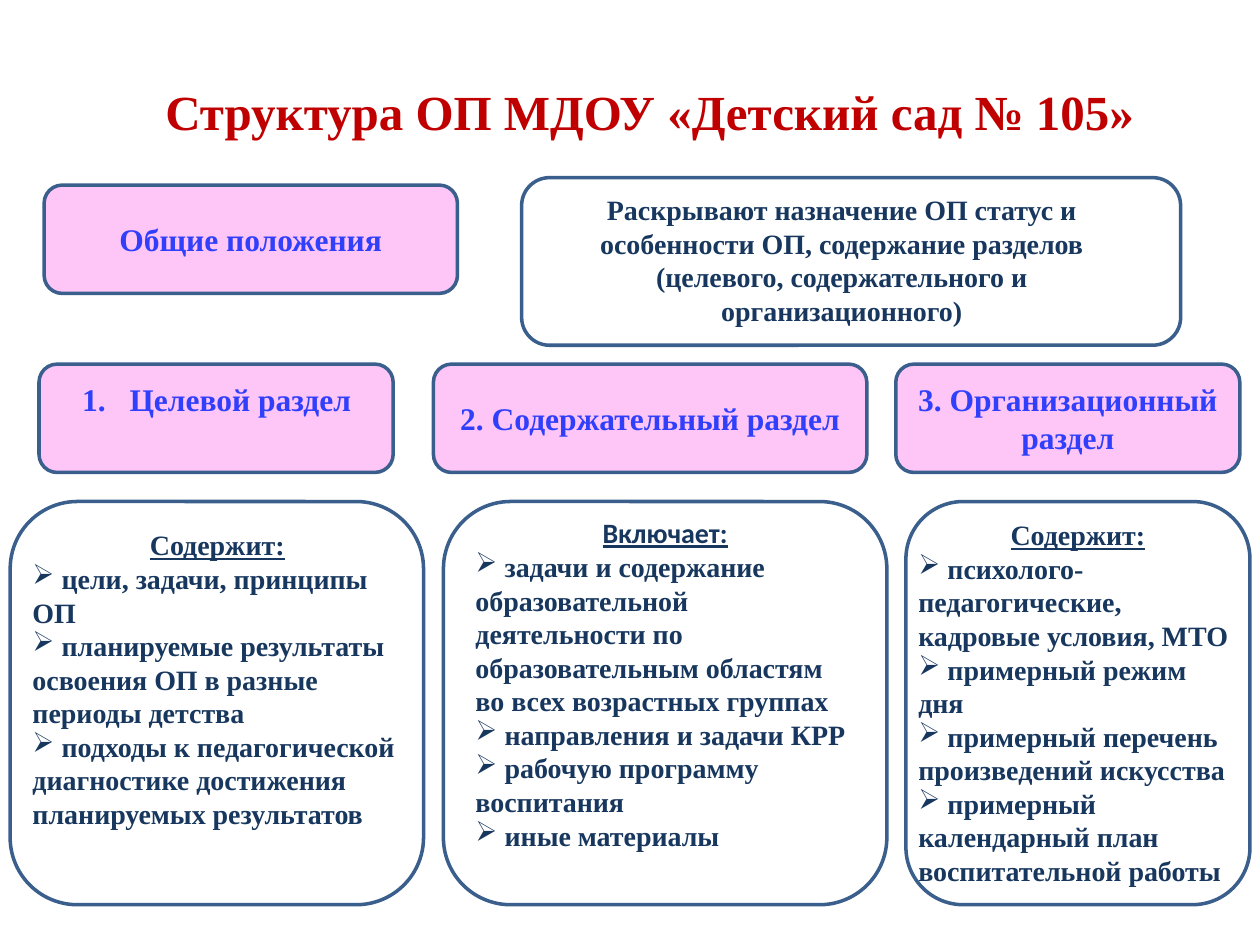
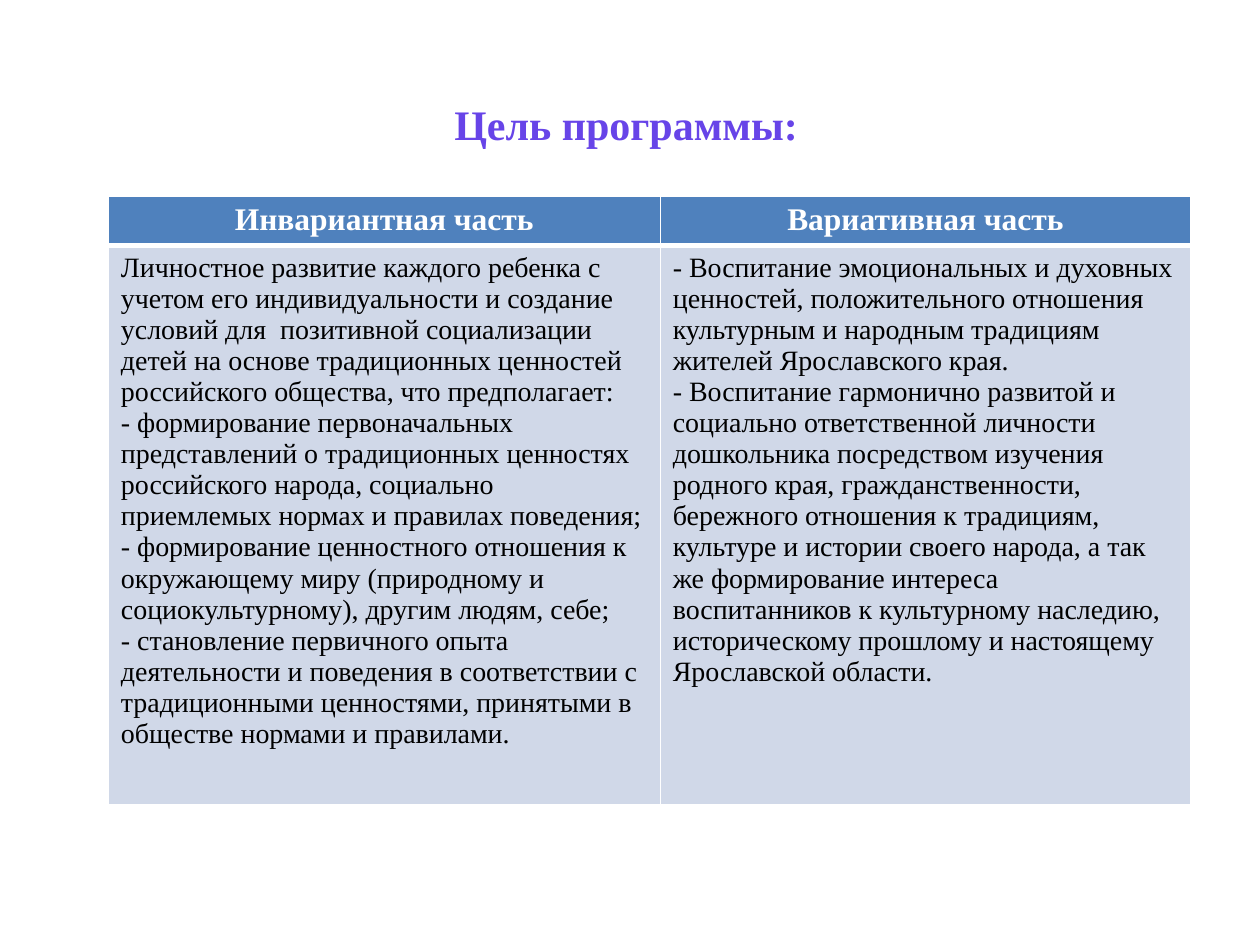
from lxml import etree
from pptx import Presentation
from pptx.dml.color import RGBColor
from pptx.enum.shapes import MSO_SHAPE
from pptx.enum.text import MSO_ANCHOR, MSO_AUTO_SIZE, PP_ALIGN
from pptx.oxml.ns import qn
from pptx.util import Pt

# Enum members
ROUNDED = MSO_SHAPE.ROUNDED_RECTANGLE
CENTER, LEFT = PP_ALIGN.CENTER, PP_ALIGN.LEFT
TOP, MIDDLE = MSO_ANCHOR.TOP, MSO_ANCHOR.MIDDLE
FIXED, GROW = MSO_AUTO_SIZE.NONE, MSO_AUTO_SIZE.SHAPE_TO_FIT_TEXT

# Colours
RED = RGBColor(0xC0, 0x00, 0x00)
VIOLET = RGBColor(0x67, 0x44, 0xE8)
BLUE = RGBColor(0x30, 0x3F, 0xFC)
NAVY = RGBColor(0x17, 0x37, 0x5E)
OUTLINE = RGBColor(0x3A, 0x5F, 0x8C)
PINK = RGBColor(0xFE, 0xC6, 0xF7)
HEADER_FILL = RGBColor(0x4F, 0x81, 0xBD)
BODY_FILL = RGBColor(0xD0, 0xD8, 0xE8)
WHITE = RGBColor(0xFF, 0xFF, 0xFF)
BLACK = RGBColor(0x00, 0x00, 0x00)

# Text formats
BASE = {"name": "Times New Roman", "bold": True}
SECTION = {**BASE, "size": Pt(18), "color": BLUE}
DETAIL = {**BASE, "size": Pt(16), "color": NAVY}
HEADER = {**BASE, "size": Pt(18), "color": WHITE}
CELL = {**BASE, "size": Pt(16), "color": BLACK, "bold": False}

# Structure slide: rows of section bands and of cards
BAND_TOP, BAND_HEIGHT = 208.1, 61.9
CARD_TOP, CARD_HEIGHT = 286.6, 230.4
BANDS = [(22.3, 202.4, None),
         (247.7, 247.7, "2. Содержательный раздел"),
         (511.9, 196.6, "3. Организационный раздел")]
CARDS = [(5.8, 236.2), (253.4, 253.4), (517.7, 196.6)]
TARGET_ITEMS = [
    "цели, задачи, принципы ОП",
    "планируемые результаты освоения ОП в разные периоды детства",
    "подходы к педагогической диагностике достижения планируемых результатов",
]
CONTENT_ITEMS = [
    "задачи и содержание образовательной деятельности по образовательным "
    "областям во всех возрастных группах",
    "направления и задачи КРР",
    "рабочую программу воспитания",
    "иные материалы",
]
ORGANIZATION_ITEMS = [
    "психолого-педагогические, кадровые условия, МТО",
    "примерный режим дня",
    "примерный перечень произведений искусства",
    "примерный календарный план воспитательной работы",
]

# Goal slide: table columns as (width, heading, paragraphs)
GOALS = [
    (315.4, "Инвариантная часть", [
        "Личностное развитие каждого ребенка с учетом его индивидуальности и "
        "создание условий для  позитивной социализации детей на основе "
        "традиционных ценностей российского общества, что предполагает:",
        "- формирование первоначальных представлений о традиционных ценностях "
        "российского народа, социально приемлемых нормах и правилах поведения;",
        "- формирование ценностного отношения к окружающему миру (природному и "
        "социокультурному), другим людям, себе;",
        "- становление первичного опыта деятельности и поведения в соответствии "
        "с традиционными ценностями, принятыми в обществе нормами и правилами.",
    ]),
    (303.1, "Вариативная часть", [
        "- Воспитание эмоциональных и духовных ценностей, положительного "
        "отношения культурным и народным традициям жителей Ярославского края.",
        "- Воспитание гармонично развитой и социально ответственной личности "
        "дошкольника посредством изучения родного края, гражданственности, "
        "бережного отношения к традициям, культуре и истории своего народа, а "
        "так же формирование интереса воспитанников к культурному наследию, "
        "историческому прошлому и настоящему Ярославской области.",
    ]),
]


class Deck:
    """Holds the style and the current slide."""

    def __init__(self):
        self.presentation = Presentation()
        self.presentation.slide_width = Pt(720)
        self.presentation.slide_height = Pt(540)
        self.slide = None

    def add_slide(self, title, box, size, color, anchor):
        layout = self.presentation.slide_layouts.get_by_name("Title Only")
        self.slide = self.presentation.slides.add_slide(layout)
        shape = self.slide.shapes.title
        shape.left, shape.top, shape.width, shape.height = map(Pt, box)
        frame = shape.text_frame
        frame.auto_size = FIXED
        frame.vertical_anchor = anchor
        self.put_text(frame, title, {**BASE, "size": Pt(size), "color": color})

    def put_text(self, frame, text, style, align=CENTER, first=True):
        paragraph = frame.paragraphs[0] if first else frame.add_paragraph()
        paragraph.alignment = align
        run = paragraph.add_run()
        run.text = text
        for name, value in style.items():
            if name == "color":
                run.font.color.rgb = value
            else:
                setattr(run.font, name, value)
        return paragraph

    def bullet(self, paragraph, tag, indent=0, **attributes):
        properties = paragraph._p.get_or_add_pPr()
        properties.set("marL", str(Pt(indent)))
        properties.set("indent", str(-Pt(indent)))
        etree.SubElement(properties, qn(tag), attributes)

    def add_list(self, frame, heading, items, font="Times New Roman"):
        self.put_text(frame, heading, {**DETAIL, "name": font, "underline": True})
        for item in items:
            paragraph = self.put_text(frame, " " + item, DETAIL, LEFT, first=False)
            self.bullet(paragraph, "a:buChar", char="➢")

    def add_box(self, box, fill=None, text=None):
        shape = self.slide.shapes.add_shape(ROUNDED, *map(Pt, box))
        shape.shadow.inherit = False
        if fill is None:
            shape.fill.background()
        else:
            shape.fill.solid()
            shape.fill.fore_color.rgb = fill
        shape.line.color.rgb = OUTLINE
        shape.line.width = Pt(2)
        frame = shape.text_frame
        frame.word_wrap = True
        frame.vertical_anchor = MIDDLE
        if text:
            self.put_text(frame, text, SECTION)
        return frame

    def add_text(self, box):
        frame = self.slide.shapes.add_textbox(*map(Pt, box)).text_frame
        frame.word_wrap = True
        frame.auto_size = GROW
        frame.vertical_anchor = TOP
        return frame

    def fill_cell(self, cell, texts, style, align, fill, bottom_width):
        for index, text in enumerate(texts):
            self.put_text(cell.text_frame, text, style, align, first=index == 0)
        properties = cell._tc.get_or_add_tcPr()
        for side, width in zip("LRTB", (1, 1, 1, bottom_width)):
            line = etree.SubElement(properties, qn(f"a:ln{side}"), w=str(Pt(width)))
            solid = etree.SubElement(line, qn("a:solidFill"))
            etree.SubElement(solid, qn("a:srgbClr"), val=str(WHITE))
        cell.fill.solid()
        cell.fill.fore_color.rgb = fill

    def add_table(self, box, row_heights, columns):
        table = self.slide.shapes.add_table(2, len(columns), *map(Pt, box)).table
        for row, height in zip(table.rows, row_heights):
            row.height = Pt(height)
        for index, (width, heading, texts) in enumerate(columns):
            table.columns[index].width = Pt(width)
            self.fill_cell(table.cell(0, index), [heading], HEADER, CENTER, HEADER_FILL, 3)
            self.fill_cell(table.cell(1, index), texts, CELL, LEFT, BODY_FILL, 1)


def build_structure(deck):
    deck.add_slide("Структура ОП МДОУ «Детский сад № 105»",
                   (70.6, 43.2, 601.2, 46), 28, RED, TOP)

    # General provisions and their explanation
    deck.add_box((25.2, 105.8, 236.2, 61.9), PINK, "Общие положения")
    deck.add_box((298.1, 101.5, 376.6, 95.8))
    deck.put_text(deck.add_text((298.1, 106.6, 365.8, 85)),
                  "Раскрывают назначение ОП статус и особенности ОП, содержание "
                  "разделов (целевого, содержательного и организационного)", DETAIL)

    # Section bands
    for left, width, text in BANDS:
        deck.add_box((left, BAND_TOP, width, BAND_HEIGHT), PINK, text)
    numbered = deck.put_text(deck.add_text((28.1, 213.8, 191.5, 28.8)),
                             "Целевой раздел", SECTION)
    deck.bullet(numbered, "a:buAutoNum", 27, type="arabicPeriod")

    # Section cards
    cards = [deck.add_box((left, CARD_TOP, width, CARD_HEIGHT)) for left, width in CARDS]
    deck.add_list(deck.add_text((11.5, 298.1, 225.4, 181.4)), "Содержит:", TARGET_ITEMS)
    cards[1].margin_bottom = Pt(25.6)
    deck.add_list(cards[1], "Включает:", CONTENT_ITEMS, "Calibri")
    deck.add_list(deck.add_text((517.7, 292.3, 196.6, 223.2)), "Содержит:",
                  ORGANIZATION_ITEMS)


def build_goal(deck):
    deck.add_slide("Цель программы:", (33.8, 44.6, 648, 51.8), 24, VIOLET, MIDDLE)
    deck.add_table((61.9, 112.3, 618.5, 347.8), (28.1, 319.7), GOALS)


def main():
    deck = Deck()
    build_structure(deck)
    build_goal(deck)
    deck.presentation.save("out.pptx")


if __name__ == "__main__":
    main()
